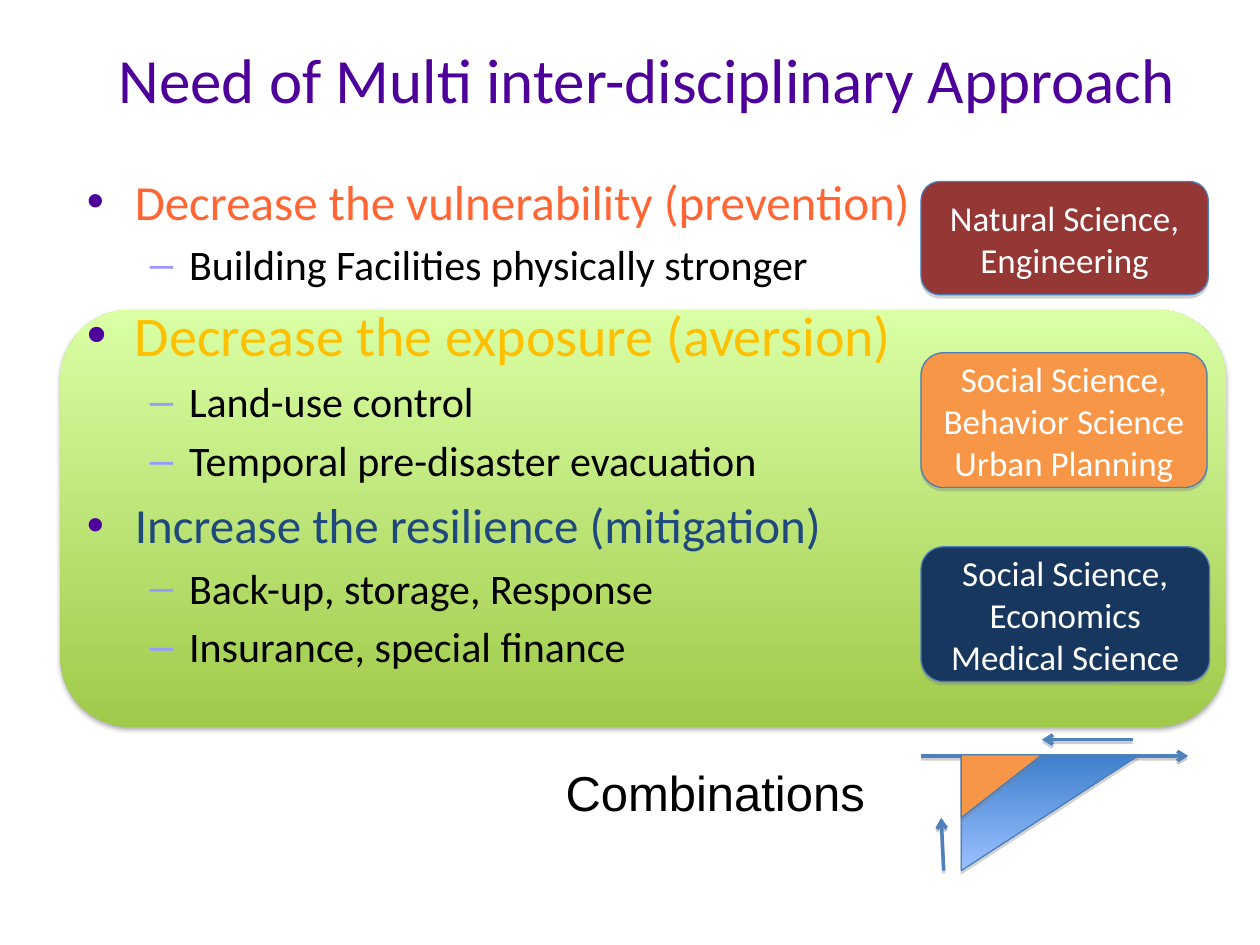
from pptx import Presentation
from pptx.dml.color import RGBColor
from pptx.enum.shapes import MSO_CONNECTOR as Link, MSO_SHAPE as Kind
from pptx.enum.text import MSO_ANCHOR as Anchor, MSO_AUTO_SIZE as Fit, PP_ALIGN as Align
from pptx.oxml import parse_xml
from pptx.oxml.ns import nsdecls, qn
from pptx.util import Inches, Pt

hue = RGBColor.from_string
deck = Presentation()
deck.slide_width, deck.slide_height = Inches(10), Inches(7.5)
unit = deck.slide_width / 100
slide = deck.slides.add_slide(deck.slide_layouts[1])
shapes = slide.shapes


def grid(*spans):
    return [int(unit * span) for span in spans]


def write(frame, text, size=20, color="FFFFFF", face="Calibri", align=None,
          level=0, gap=0, mark=None):
    para = frame.paragraphs[0]
    if para.text:
        para = frame.add_paragraph()
        para.space_before = Pt(size * gap)
    elif gap:
        para.space_before = Pt(0)
    para.level = level
    if align is not None:
        para.alignment = align
    if mark:
        sign, tint, left, hang = mark
        props = para._p.get_or_add_pPr()
        props.set("marL", str(Inches(left)))
        props.set("indent", str(-Inches(hang)))
        props.append(parse_xml(f'<a:buClr {nsdecls("a")}><a:srgbClr val="{tint}"/></a:buClr>'))
        props.append(parse_xml(f'<a:buFont {nsdecls("a")} typeface="Arial"/>'))
        props.append(parse_xml(f'<a:buChar {nsdecls("a")} char="{sign}"/>'))
    run = para.add_run()
    run.text = text
    font = run.font
    font.size, font.name, font.color.rgb = Pt(size), face, hue(color)


title, body = shapes.title, slide.placeholders[1]
for holder, spans in ((title, (6.7, 2.3, 89.3, 7.9)), (body, (5.9, 13.1, 85, 45.8))):
    holder.left, holder.top, holder.width, holder.height = grid(*spans)
    holder.text_frame.auto_size = Fit.NONE
    holder.text_frame.word_wrap = True
title.text_frame.vertical_anchor = Anchor.MIDDLE
body.text_frame.vertical_anchor = Anchor.TOP
write(title.text_frame, "Need of Multi inter-disciplinary Approach",
      size=36, color="4D009A", align=Align.CENTER)

marks = ("•", "4D009A", 0.38, 0.38), ("–", "9999FF", 0.81, 0.31)
goals = (
    ("Decrease the vulnerability (prevention)", 28, "FF6633",
     ["Building Facilities physically stronger"]),
    ("Decrease the exposure (aversion)", 32, "FFC000",
     ["Land-use control", "Temporal pre-disaster evacuation"]),
    ("Increase the resilience (mitigation)", 28, "1F497D",
     ["Back-up, storage, Response", "Insurance, special finance"]),
)
for goal, size, color, means in goals:
    write(body.text_frame, goal, size=size, color=color, gap=0.2, mark=marks[0])
    for item in means:
        write(body.text_frame, item, size=24, color="000000", level=1, gap=0.2, mark=marks[1])

shades = []
for ends in ((73.1, 60, 94.3, 60), (74.9, 69.1, 74.7, 64.9), (89.9, 58.7, 82.7, 58.7)):
    arrow = shapes.add_connector(Link.STRAIGHT, *grid(*ends))
    arrow.line.color.rgb, arrow.line.width = hue("4F81BD"), Pt(2)
    arrow.line._get_or_add_ln().append(parse_xml(f'<a:tailEnd {nsdecls("a")} type="arrow"/>'))
    shades.append((arrow, "808080", 38, 0, 1.6))

panel = shapes.add_shape(Kind.ROUNDED_RECTANGLE, *grid(4.8, 24.6, 92.5, 33.1))
shapes._spTree.insert(2, panel._element)
panel.line.fill.background()
shades.append((panel, "000000", 35, 3.1, 1.8))

large = shapes.add_shape(Kind.RIGHT_TRIANGLE, *grid(76.3, 60, 14, 9.1))
small = shapes.add_shape(Kind.RIGHT_TRIANGLE, *grid(76.3, 59.9, 6.4, 5))
small.fill.solid()
small.fill.fore_color.rgb = hue("F79646")
for wedge in (large, small):
    wedge._element.spPr.find(qn("a:xfrm")).set("flipV", "1")

for shape, angle, tints in ((panel, 90, ("A0CA4A", "DAFFA5")),
                            (large, 270, ("9BC1FF", "3F80CD"))):
    shape.fill.gradient()
    shape.fill.gradient_angle = angle
    for stop, tint, place in zip(shape.fill.gradient_stops, tints, (0, 1)):
        stop.color.rgb, stop.position = hue(tint), place

label = shapes.add_textbox(*grid(43.9, 60, 26, 5.7)).text_frame
label.word_wrap = False
write(label, "Combinations", size=28, color="000000", face="Arial")

fields = (
    (14.4, 22.8, 9, "953735", ("Natural Science,", "Engineering")),
    (28, 22.7, 10.7, "F79646", ("Social Science,", "Behavior Science", "Urban Planning")),
    (43.4, 22.9, 10.7, "17375E", ("Social Science,", "Economics", "Medical Science")),
)
cards = []
for top, wide, high, color, lines in fields:
    card = shapes.add_shape(Kind.ROUNDED_RECTANGLE, *grid(73.1, top, wide, high))
    card.fill.solid()
    card.fill.fore_color.rgb = hue(color)
    card.text_frame.word_wrap = True
    card.text_frame.vertical_anchor = Anchor.MIDDLE
    for text in lines:
        write(card.text_frame, text, align=Align.CENTER)
    cards.append(card)

for shape in (large, small, *cards):
    shape.line.color.rgb, shape.line.width = hue("4A7EBB"), Pt(0.75)
    shades.append((shape, "808080", 35, 0, 1.8))

for shape, tint, alpha, blur, drop in shades:
    shape._element.spPr.append(parse_xml(
        f'<a:effectLst {nsdecls("a")}><a:outerShdw blurRad="{Pt(blur)}" dist="{Pt(drop)}" '
        f'dir="5400000" rotWithShape="0"><a:srgbClr val="{tint}">'
        f'<a:alpha val="{alpha * 1000}"/></a:srgbClr></a:outerShdw></a:effectLst>'))

deck.save("out.pptx")
